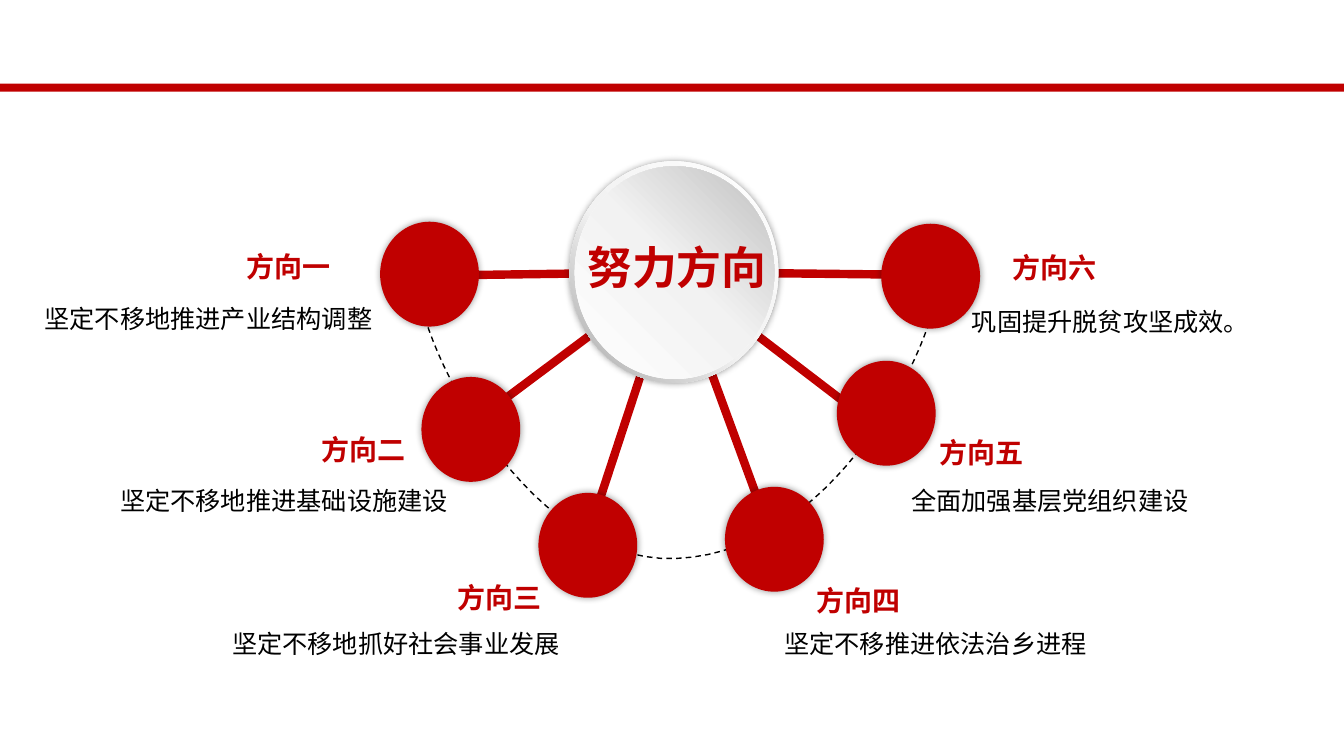
import pptx
import pptx.util
import pptx.dml.color
import pptx.enum.dml
import pptx.enum.shapes
import pptx.enum.text
import pptx.oxml
import pptx.oxml.ns

PX = 9144
SHAPE = pptx.enum.shapes.MSO_SHAPE
ALIGN = pptx.enum.text.PP_ALIGN
RGB = pptx.dml.color.RGBColor.from_string
NS = pptx.oxml.ns.nsdecls("a")
THEME = {
    "font": "Noto Sans CJK SC", "red": "C00000", "black": "000000",
    "hub_size": 32, "title_size": 20, "body_size": 18,
    "ring": [(0, "FFFFFF"), (55, "F2F2F2"), (100, "A6A6A6")],
    "disc": [(0, "FFFFFF"), (51, "F2F2F2"), (100, "BFBFBF")],
}

prs = pptx.Presentation()
prs.slide_width = 1333 * PX
prs.slide_height = 750 * PX
s = prs.slides.add_slide(prs.slide_layouts[6])


def add_shape(kind, box, fill, angle=0, shadow=False):
    sp = s.shapes.add_shape(kind, *[v * PX for v in box])
    sp.line.fill.background()
    sp.shadow.inherit = False
    spPr = sp._element.spPr
    if isinstance(fill, str):
        sp.fill.solid()
        sp.fill.fore_color.rgb = RGB(fill)
    else:
        sp.fill.gradient()
        sp.fill.gradient_angle = 360 - angle
        stops = spPr.find(".//" + pptx.oxml.ns.qn("a:gsLst"))
        for stop in list(stops):
            stops.remove(stop)
        for pos, color in fill:
            stops.append(pptx.oxml.parse_xml(
                f'<a:gs {NS} pos="{pos * 1000}"><a:srgbClr val="{color}"/></a:gs>'))
    if shadow:
        spPr.find(pptx.oxml.ns.qn("a:effectLst")).append(pptx.oxml.parse_xml(
            f'<a:outerShdw {NS} blurRad="63500" dist="0" dir="0" algn="ctr" rotWithShape="0">'
            '<a:srgbClr val="000000"><a:alpha val="40000"/></a:srgbClr></a:outerShdw>'))
    return sp


def add_text(text, box, size, color, align, bold=False, spacing=None):
    tb = s.shapes.add_textbox(*[v * PX for v in box])
    tf = tb.text_frame
    tf.word_wrap = True
    tf.auto_size = pptx.enum.text.MSO_AUTO_SIZE.SHAPE_TO_FIT_TEXT
    tf.text = text
    p = tf.paragraphs[0]
    p.alignment = align
    p.line_spacing = spacing
    r = p.runs[0]
    r.font.size = pptx.util.Pt(size)
    r.font.bold = bold
    r.font.name = THEME["font"]
    r.font.color.rgb = RGB(color)
    r._r.get_or_add_rPr().append(
        pptx.oxml.parse_xml(f'<a:ea {NS} typeface="{THEME["font"]}"/>'))


add_shape(SHAPE.RECTANGLE, (0, 83, 1333, 8), THEME["red"])

arc_start = (423, 272)
arc_curves = [
    ((460, 274), (886, 266), (929, 278)),
    ((937, 314), (841, 547), (671, 554)),
    ((501, 562), (385, 270), (423, 272)),
]
STEPS = 32
arc_points = []
start = arc_start
for c1, c2, end in arc_curves:
    for i in range(1, STEPS + 1):
        t = i / STEPS
        arc_points.append(tuple(
            round(PX * ((1 - t) ** 3 * a + 3 * (1 - t) ** 2 * t * b
                        + 3 * (1 - t) * t ** 2 * c + t ** 3 * d))
            for a, b, c, d in zip(start, c1, c2, end)))
    start = end
builder = s.shapes.build_freeform(arc_start[0] * PX, arc_start[1] * PX)
builder.add_line_segments(arc_points, close=True)
arc = builder.convert_to_shape()
arc.fill.background()
arc.shadow.inherit = False
arc.line.color.rgb = RGB(THEME["black"])
arc.line.width = pptx.util.Pt(1)
arc.line.dash_style = pptx.enum.dml.MSO_LINE.DASH

HUB = (669, 270)
for end in [(386, 274), (447, 436), (577, 550), (768, 540), (886, 436), (944, 273)]:
    spoke = s.shapes.add_connector(
        pptx.enum.shapes.MSO_CONNECTOR.STRAIGHT, *[v * PX for v in end + HUB])
    spoke.line.color.rgb = RGB(THEME["red"])
    spoke.line.width = pptx.util.Pt(6)
    spoke._element.spPr.append(pptx.oxml.parse_xml(f"<a:effectLst {NS}/>"))

directions = [
    ("方向一", (234, 243), "坚定不移地推进产业结构调整", (1, 287, 378), (377, 220), ALIGN.RIGHT),
    ("方向二", (308, 424), "坚定不移地推进基础设施建设", (46, 468, 408), (418, 374), ALIGN.RIGHT),
    ("方向三", (443, 571), "坚定不移地抓好社会事业发展", (187, 609, 378), (534, 489), ALIGN.RIGHT),
    ("方向四", (800, 574), "坚定不移推进依法治乡进程", (768, 609, 378), (719, 483), ALIGN.LEFT),
    ("方向五", (922, 427), "全面加强基层党组织建设", (894, 468, 378), (830, 358), ALIGN.LEFT),
    ("方向六", (994, 244), "巩固提升脱贫攻坚成效。", (954, 290, 378), (874, 222), ALIGN.LEFT),
]
for title, title_at, body, body_at, dot_at, align in directions:
    add_shape(SHAPE.OVAL, dot_at + (98, 104), THEME["red"], shadow=True)
    add_text(title, title_at + (104, 44), THEME["title_size"], THEME["red"], align, bold=True)
    add_text(body, body_at + (49,), THEME["body_size"], THEME["black"], align, spacing=1.3)

ring = add_shape(SHAPE.DONUT, (565, 160, 207, 220), THEME["ring"], 135, shadow=True)
ring.adjustments[0] = 0.05
add_shape(SHAPE.OVAL, (570, 165, 198, 211), THEME["disc"], 315)
add_text("努力方向", (570, 233, 203, 64), THEME["hub_size"], THEME["red"], ALIGN.CENTER, bold=True)

prs.save("out.pptx")
